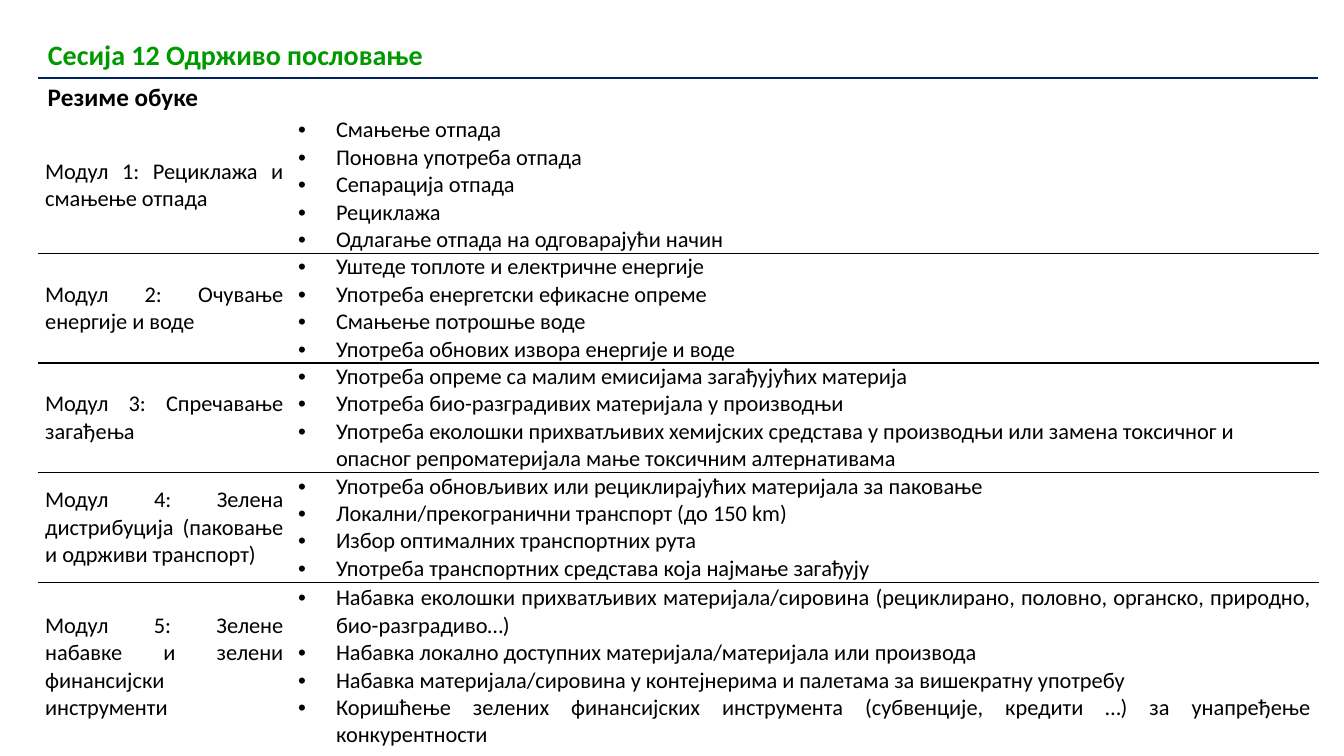
from dataclasses import dataclass

from lxml.etree import SubElement
from pptx import Presentation
from pptx.dml.color import RGBColor
from pptx.enum.text import MSO_ANCHOR, MSO_AUTO_SIZE, PP_ALIGN
from pptx.oxml.ns import qn
from pptx.util import Pt

PX = 9525


@dataclass(frozen=True)
class Theme:
    """Colours, font and type sizes of the slide."""
    font: str = "Calibri"
    green: str = "009900"
    navy: str = "002060"
    black: str = "000000"
    white: str = "FFFFFF"
    title: int = 20
    heading: int = 18
    body: int = 16


T = Theme()

MODULES = [
    ("Модул 1: Рециклажа и смањење отпада", 103, PP_ALIGN.JUSTIFY, [
        "Смањење отпада",
        "Поновна употреба отпада",
        "Сепарација отпада",
        "Рециклажа",
        "Одлагање отпада на одговарајући начин",
    ]),
    ("Модул 2: Очување енергије и воде", 82, PP_ALIGN.LEFT, [
        "Уштеде топлоте и електричне енергије",
        "Употреба енергетски ефикасне опреме",
        "Смањење потрошње воде",
        "Употреба обнових извора енергије и воде",
    ]),
    ("Модул 3: Спречавање загађења", 103, PP_ALIGN.LEFT, [
        "Употреба опреме са малим емисијама загађујућих материја",
        "Употреба био-разградивих материјала у производњи",
        "Употреба еколошки прихватљивих хемијских средстава у производњи "
        "или замена токсичног и опасног репроматеријала мање токсичним алтернативама",
    ]),
    ("Модул 4: Зелена дистрибуција (паковање и одрживи транспорт)", 101, PP_ALIGN.LEFT, [
        "Употреба обновљивих или рециклирајућих материјала за паковање",
        "Локални/прекогранични транспорт (до 150 km)",
        "Избор оптималних транспортних рута",
        "Употреба транспортних средстава која најмање загађују",
    ]),
    ("Модул 5: Зелене набавке и зелени финансијски инструменти", 161, PP_ALIGN.JUSTIFY, [
        "Набавка еколошки прихватљивих материјала/сировина (рециклирано, "
        "половно, органско, природно, био-разградиво…)",
        "Набавка локално доступних материјала/материјала или производа",
        "Набавка материјала/сировина у контејнерима и палетама за вишекратну употребу",
        "Коришћење зелених финансијских инструмента (субвенције, кредити …) "
        "за унапређење конкурентности",
    ]),
]


def px(n):
    """Turn whole pixels into EMU."""
    return n * PX


def write(tf, *lines, size=T.body, color=T.black, bold=False, align=PP_ALIGN.LEFT, bullet=False):
    """Write each line as a formatted paragraph."""
    for i, text in enumerate(lines):
        p = tf.add_paragraph() if i else tf.paragraphs[0]
        p.alignment = align
        r = p.add_run()
        r.text = text
        r.font.name = T.font
        r.font.size = Pt(size)
        r.font.bold = bold
        r.font.color.rgb = RGBColor.from_string(color)
        if bullet:
            pPr = p._p.get_or_add_pPr()
            pPr.set("marL", str(px(36)))
            pPr.set("indent", str(px(-36)))
            SubElement(pPr, qn("a:buFont"), typeface="Arial")
            SubElement(pPr, qn("a:buChar"), char="•")


def style_cell(cell, **borders):
    """Give a cell its borders by side letter and no fill."""
    tcPr = cell._tc.get_or_add_tcPr()
    for side in "LRTB":
        ln = SubElement(tcPr, qn(f"a:ln{side}"), w=str(Pt(1)))
        if side in borders:
            fill = SubElement(ln, qn("a:solidFill"))
            SubElement(fill, qn("a:srgbClr"), val=borders[side])
        else:
            SubElement(ln, qn("a:noFill"))
    cell.fill.background()


def add_plain_table(s, rows, cols, x, y, w, h):
    """Add a table without header or banding."""
    frame = s.shapes.add_table(rows, cols, px(x), px(y), px(w), px(h))
    frame.table.first_row = False
    frame.table.horz_banding = False
    return frame


def add_title(s, x, y, w, h):
    """Place the session title above its rule."""
    cell = add_plain_table(s, 1, 1, x, y, w, h).table.cell(0, 0)
    style_cell(cell, L=T.white, R=T.white, T=T.white, B=T.navy)
    write(cell.text_frame, "Сесија 12 Одрживо пословање",
          size=T.title, color=T.green, bold=True)


def add_heading(s, x, y, w, h):
    """Place the heading of the summary."""
    tf = s.shapes.add_textbox(px(x), px(y), px(w), px(h)).text_frame
    tf.word_wrap = True
    tf.auto_size = MSO_AUTO_SIZE.SHAPE_TO_FIT_TEXT
    write(tf, "Резиме обуке", size=T.heading, bold=True)


def add_modules(s, x, y, w, h, name_w):
    """Place the table of modules and their topics."""
    frame = add_plain_table(s, len(MODULES), 2, x, y, w, h)
    table = frame.table
    table.columns[0].width = px(name_w)
    table.columns[1].width = px(w - name_w)
    for i, (name, row_h, align, topics) in enumerate(MODULES):
        table.rows[i].height = px(row_h)
        borders = {}
        if i > 0:
            borders["T"] = T.black
        if i < len(MODULES) - 1:
            borders["B"] = T.black
        for cell in table.rows[i].cells:
            cell.vertical_anchor = MSO_ANCHOR.MIDDLE
            cell.margin_left = cell.margin_right = px(7)
            cell.margin_top = cell.margin_bottom = 0
            style_cell(cell, **borders)
        write(table.cell(i, 0).text_frame, name, align=PP_ALIGN.JUSTIFY)
        write(table.cell(i, 1).text_frame, *topics, align=align, bullet=True)
    frame.height = px(h)


def main():
    """Build the slide and save it."""
    prs = Presentation()
    prs.slide_width, prs.slide_height = px(1280), px(720)
    s = prs.slides.add_slide(prs.slide_layouts[6])
    left, width = 36, 1220
    add_title(s, left, 32, width, 41)
    add_modules(s, left, 111, width, 597, name_w=241)
    add_heading(s, left, 73, 330, 38)
    prs.save("out.pptx")


if __name__ == "__main__":
    main()
